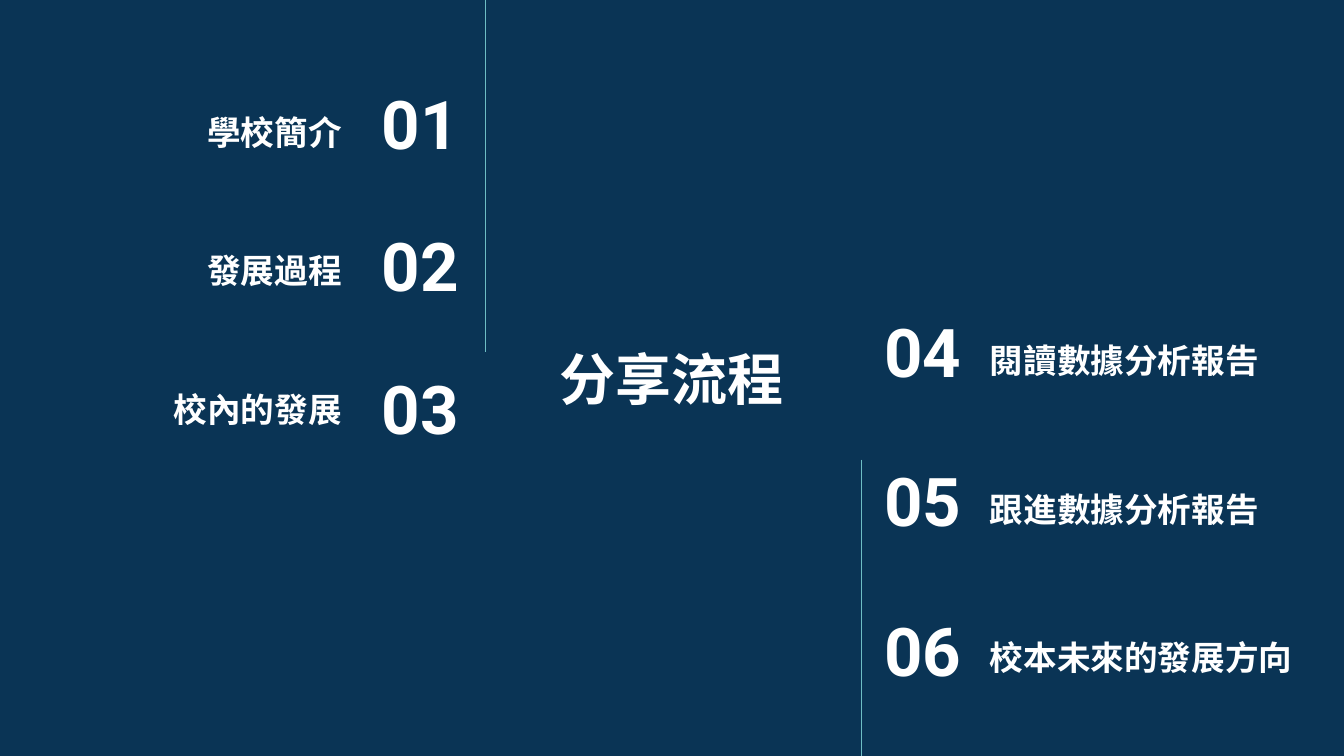
import pptx
import pptx.util
import pptx.dml.color
import pptx.enum.shapes
import pptx.enum.text
from lxml import etree
from pptx.oxml.ns import qn
from pptx.util import Cm, Pt

# Content
TITLE = "分享流程"
LEFT_ITEMS = [("01", "學校簡介"), ("02", "發展過程"), ("03", "校內的發展")]
RIGHT_ITEMS = [("04", "閱讀數據分析報告"), ("05", "跟進數據分析報告"),
               ("06", "校本未來的發展方向")]

# Layout in cm: left, first top, step between rows, width
LEFT_NUMBERS = (5.85, 1.52, 2.69, 3.07)
LEFT_LABELS = (1.22, 1.52, 2.62, 5.49)
RIGHT_NUMBERS = (16.46, 5.82, 2.83, 2.97)
RIGHT_LABELS = (18.46, 5.84, 2.81, 6.9)
ROW_HEIGHT = 1.6
DIVIDERS = [(9.17, 0, 6.65), (16.28, 8.69, 14.33)]  # x, top, bottom

# Style
NAVY, TEAL, WHITE = "0A3455", "6EBDC4", "FFFFFF"
CJK, LATIN = "Noto Sans CJK SC", "Roboto"
LEFT, CENTER, RIGHT = (pptx.enum.text.PP_ALIGN.LEFT, pptx.enum.text.PP_ALIGN.CENTER,
                       pptx.enum.text.PP_ALIGN.RIGHT)
MIDDLE, BOTTOM = pptx.enum.text.MSO_ANCHOR.MIDDLE, pptx.enum.text.MSO_ANCHOR.BOTTOM


def rgb(value):
    return pptx.dml.color.RGBColor.from_string(value)


def write(sp, text, font, size, align, anchor):
    tf = sp.text_frame
    tf.word_wrap = True
    tf.auto_size = pptx.enum.text.MSO_AUTO_SIZE.NONE
    tf.vertical_anchor = anchor
    tf.margin_left = tf.margin_right = tf.margin_top = tf.margin_bottom = Cm(0.25)
    p = tf.paragraphs[0]
    p.alignment = align
    r = p.add_run()
    r.text = text
    r.font.name, r.font.size, r.font.bold = font, Pt(size), True
    r.font.color.rgb = rgb(WHITE)
    ea = etree.SubElement(r.font._element, qn("a:ea"))
    ea.set("typeface", font)


def add_column(s, texts, place, font, size, align, anchor):
    left, top, step, width = place
    for i, text in enumerate(texts):
        sp = s.shapes.add_textbox(Cm(left), Cm(top + i * step), Cm(width), Cm(ROW_HEIGHT))
        write(sp, text, font, size, align, anchor)


prs = pptx.Presentation()
prs.slide_width, prs.slide_height = Cm(25.4), Cm(14.29)
s = prs.slides.add_slide(prs.slide_layouts[5])
s.background.fill.solid()
s.background.fill.fore_color.rgb = rgb(NAVY)

# Title
sp = s.shapes.title
sp.left, sp.top, sp.width, sp.height = Cm(9.4), Cm(5.84), Cm(6.58), Cm(2.62)
write(sp, TITLE, CJK, 30, CENTER, MIDDLE)

# Agenda columns
for items, numbers, labels, align in [
    (LEFT_ITEMS, LEFT_NUMBERS, LEFT_LABELS, RIGHT),
    (RIGHT_ITEMS, RIGHT_NUMBERS, RIGHT_LABELS, LEFT),
]:
    add_column(s, [n for n, _ in items], numbers, LATIN, 36, align, MIDDLE)
    add_column(s, [t for _, t in items], labels, CJK, 18, align, BOTTOM)

# Divider lines
for x, top, bottom in DIVIDERS:
    line = s.shapes.add_connector(pptx.enum.shapes.MSO_CONNECTOR.STRAIGHT,
                                  Cm(x), Cm(top), Cm(x), Cm(bottom))
    line.line.color.rgb = rgb(TEAL)
    line.line.width = Pt(0.75)
    etree.SubElement(line._element.spPr, qn("a:effectLst"))

prs.save("out.pptx")
